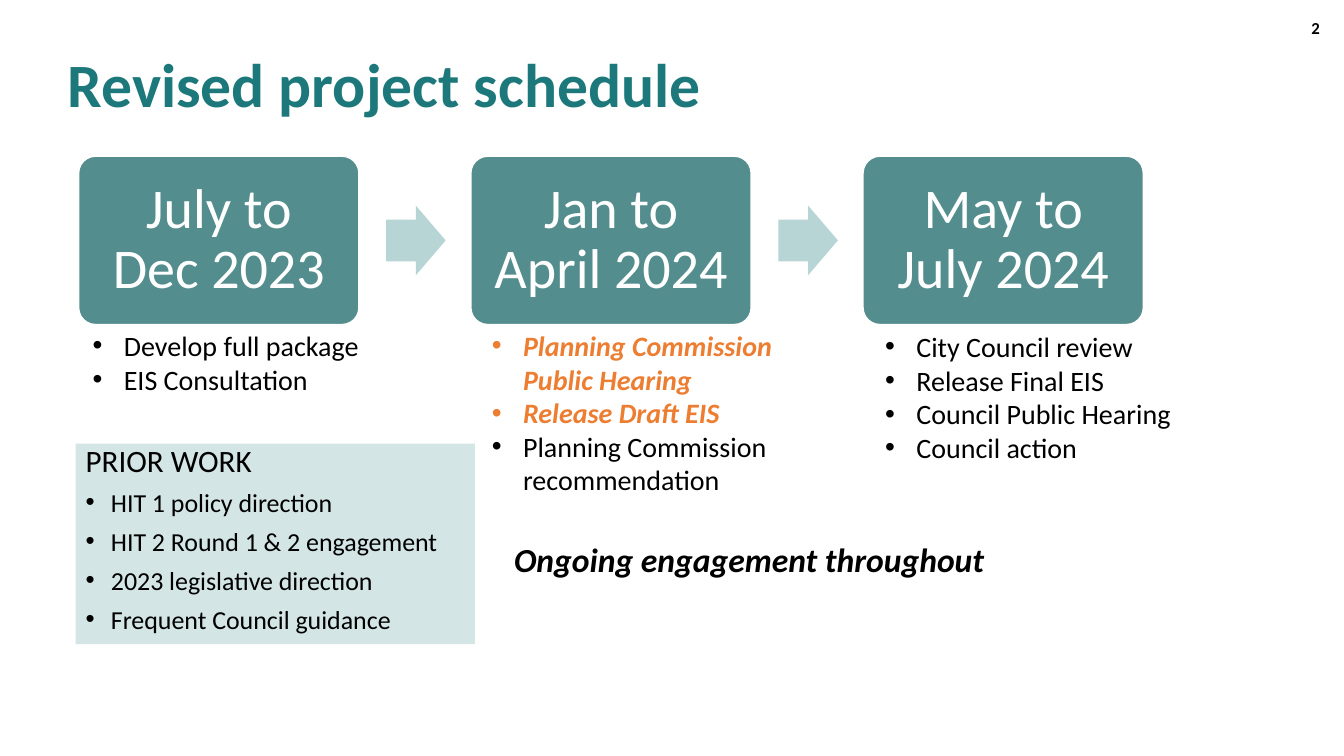
from pptx import Presentation
from pptx.dml.color import RGBColor as RGB
from pptx.enum.shapes import MSO_SHAPE as Shape
from pptx.enum.text import MSO_ANCHOR as Anchor, MSO_AUTO_SIZE as Fit, PP_ALIGN as Align
from pptx.oxml.ns import qn
from pptx.util import Inches, Pt
from lxml import etree

HEX = {"title": "1C787A", "card": "548D8E", "arrow": "B8D5D6", "panel": "D3E5E5",
       "hot": "ED7D31", "text": "000000", "white": "FFFFFF"}
PLAIN = {"size": Pt(20)}
HOT = {"size": Pt(20), "bold": True, "italic": True, "color": "hot"}
PHASES = [
    ("July to Dec 2023", (0.82, 3.21, 3.53, 1.38),
     [("Develop full package", PLAIN), ("EIS Consultation", PLAIN)]),
    ("Jan to April 2024", (4.78, 3.21, 3.03, 1.78),
     [("Planning Commission Public Hearing", HOT), ("Release Draft EIS", HOT),
      ("Planning Commission recommendation", PLAIN)]),
    ("May to July 2024", (8.68, 3.22, 3.15, 1.45),
     [("City Council review", PLAIN), ("Release Final EIS", PLAIN),
      ("Council Public Hearing", PLAIN), ("Council action", PLAIN)]),
]
PRIOR = ["HIT 1 policy direction", "HIT 2 Round 1 & 2 engagement",
         "2023 legislative direction", "Frequent Council guidance"]


def paint(item, name):
    item.fill.solid()
    item.fill.fore_color.rgb = RGB.from_string(HEX[name])


def place(item, box):
    for side, length in zip(("left", "top", "width", "height"), box):
        setattr(item, side, Inches(length))


def mark(para, indent):
    """Set a bullet with a hanging indent, or none when indent is 0."""
    props = para._p.get_or_add_pPr()
    props.set("marL", str(Inches(indent)))
    props.set("indent", str(-Inches(indent)))
    if indent:
        font = etree.SubElement(props, qn("a:buFont"))
        font.set("typeface", "Arial")
        etree.SubElement(props, qn("a:buChar")).set("char", "•")
    else:
        etree.SubElement(props, qn("a:buNone"))


def write(frame, lines, indent=0, **style):
    """Fill a frame with (text, font values) lines; style goes to each paragraph."""
    frame.word_wrap = True
    frame.auto_size = Fit.NONE
    for i, (text, look) in enumerate(lines):
        para = frame.paragraphs[0] if i == 0 else frame.add_paragraph()
        mark(para, look.get("indent", indent))
        values = {"space_before": Pt(0), **style}
        if i == 0:
            values["space_before"] = Pt(0)
        for key, value in values.items():
            setattr(para, key, value)
        run = para.add_run()
        run.text = text
        run.font.name = "Calibri"
        run.font.color.rgb = RGB.from_string(HEX[look.get("color", "text")])
        for key in ("size", "bold", "italic"):
            if key in look:
                setattr(run.font, key, look[key])


def label(slide, box, lines, indent=0, **style):
    item = slide.shapes.add_textbox(*map(Inches, box))
    write(item.text_frame, lines, indent, **style)
    return item


def block(slide, kind, box, name, *adjust):
    item = slide.shapes.add_shape(kind, *map(Inches, box))
    item.shadow.inherit = False
    paint(item, name)
    item.line.fill.background()
    for i, value in enumerate(adjust):
        item.adjustments[i] = value
    return item


def card(slide, box, text):
    item = block(slide, Shape.ROUNDED_RECTANGLE, box, "card", 0.1)
    item.line.color.rgb = RGB.from_string(HEX["white"])
    item.line.width = Pt(1)
    frame = item.text_frame
    frame.vertical_anchor = Anchor.MIDDLE
    for side in ("left", "right", "top", "bottom"):
        setattr(frame, "margin_" + side, Inches(0.17))
    write(frame, [(text, {"size": Pt(40), "color": "white"})],
          alignment=Align.CENTER, line_spacing=0.9)


def flow(slide, box):
    """Place the phase cards, the arrows between them and their lists."""
    left, top, width, high = box
    wide, step = 2.78, (width - 2.78) / (len(PHASES) - 1)
    for i, (name, area, tasks) in enumerate(PHASES):
        x = left + i * step
        card(slide, (x, top, wide, high), name)
        if i < len(PHASES) - 1:
            block(slide, Shape.RIGHT_ARROW, (x + 3.05, top + 0.49, 0.59, 0.69),
                  "arrow", 0.6, 0.5)
        label(slide, area, tasks, 0.31)


def header(slide, box):
    title = slide.shapes.title
    place(title, box)
    title.text_frame.vertical_anchor = Anchor.MIDDLE
    look = {"size": Pt(44), "bold": True, "color": "title"}
    write(title.text_frame, [("Revised project schedule", look)],
          alignment=Align.LEFT, line_spacing=0.9)


def prior(slide, box):
    body = slide.placeholders[1]
    place(body, box)
    paint(body, "panel")
    lines = [("PRIOR WORK", {"size": Pt(22.2), "indent": 0})]
    lines += [(text, {"size": Pt(18.5)}) for text in PRIOR]
    write(body.text_frame, lines, 0.25, line_spacing=0.8, space_before=Pt(10))


def main():
    deck = Presentation()
    deck.slide_width, deck.slide_height = Inches(13.33), Inches(7.5)
    slide = deck.slides.add_slide(deck.slide_layouts[1])
    header(slide, (0.57, 0.14, 11.5, 1.45))
    flow(slide, (0.78, 1.55, 10.56, 1.67))
    prior(slide, (0.75, 4.4, 3.96, 1.99))
    label(slide, (5, 5.3, 4.92, 0.91), [("Ongoing engagement throughout",
          {"size": Pt(24), "bold": True, "italic": True})])
    page = label(slide, (10.19, 0.08, 3, 0.4), [("2", {"size": Pt(12), "bold": True})],
                 alignment=Align.RIGHT)
    page.text_frame.vertical_anchor = Anchor.MIDDLE
    deck.save("out.pptx")


if __name__ == "__main__":
    main()
